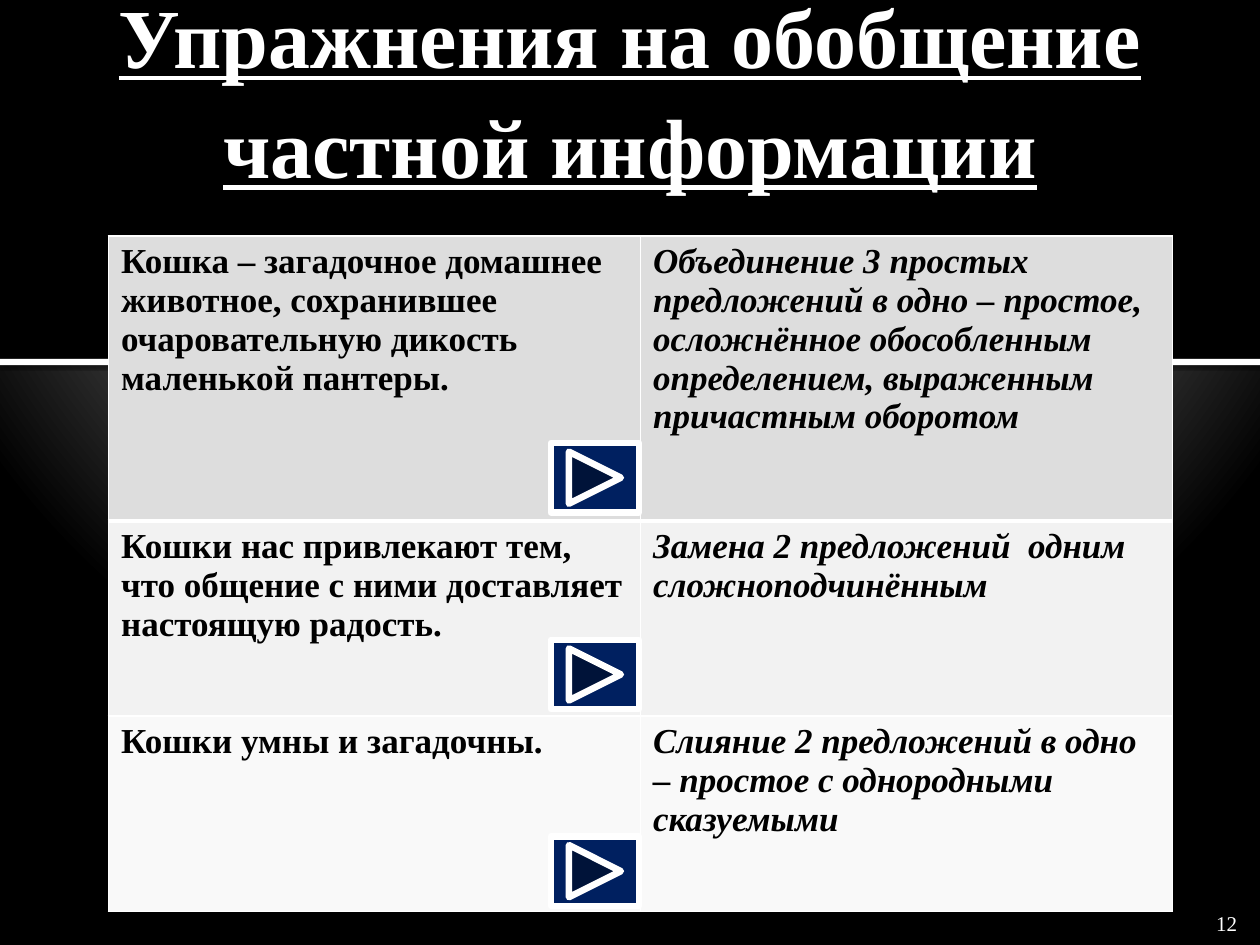
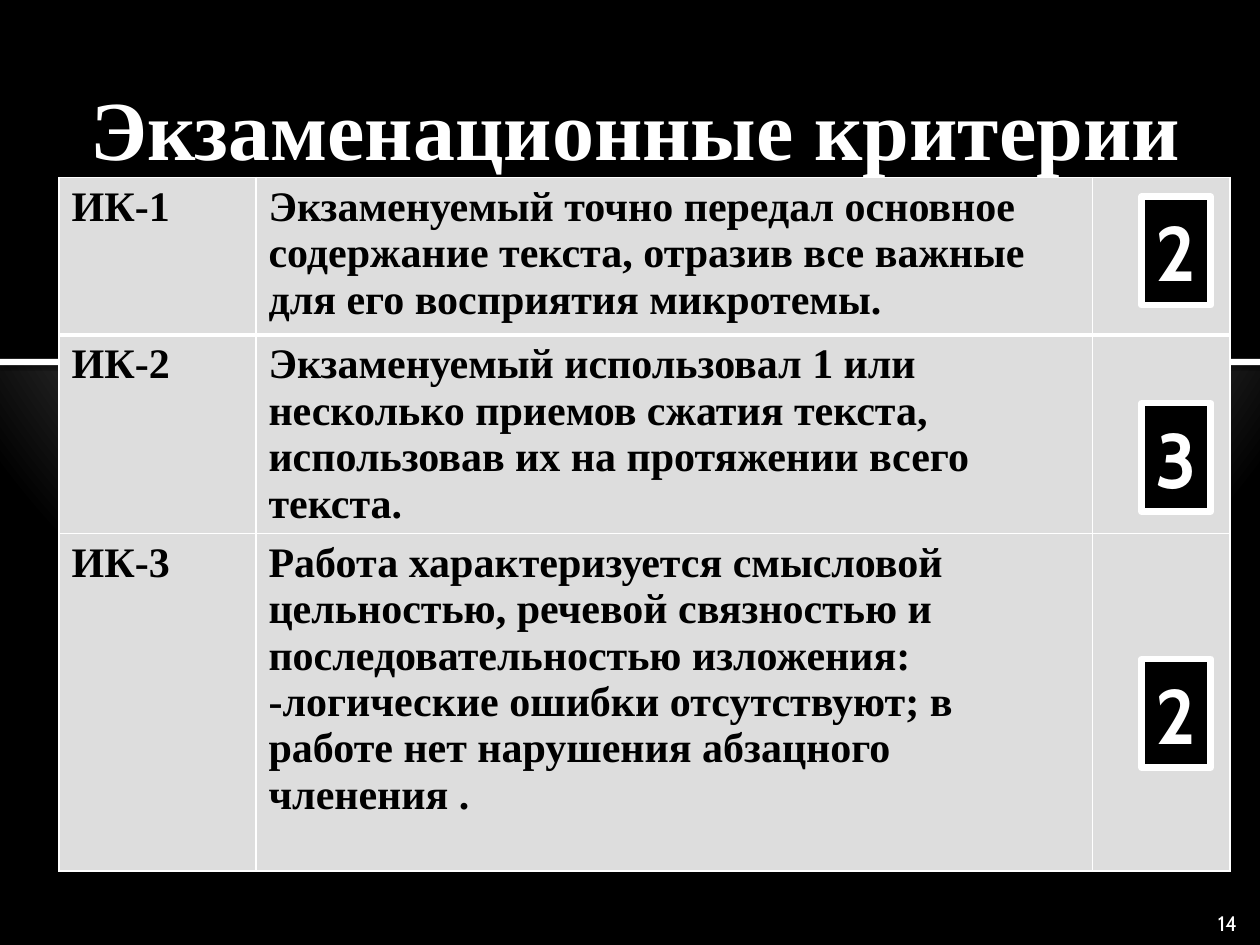
from dataclasses import dataclass

from pptx import Presentation
from pptx.dml.color import RGBColor
from pptx.enum.shapes import MSO_SHAPE
from pptx.enum.text import MSO_ANCHOR, MSO_AUTO_SIZE, PP_ALIGN
from pptx.oxml import parse_xml
from pptx.oxml.ns import nsdecls, qn
from pptx.util import Pt

RECTANGLE = MSO_SHAPE.RECTANGLE
NEXT_BUTTON = MSO_SHAPE.ACTION_BUTTON_FORWARD_OR_NEXT
LEFT, CENTER, RIGHT = PP_ALIGN.LEFT, PP_ALIGN.CENTER, PP_ALIGN.RIGHT
MIDDLE, BOTTOM = MSO_ANCHOR.MIDDLE, MSO_ANCHOR.BOTTOM
NO_AUTOFIT = MSO_AUTO_SIZE.NONE
TITLE_ONLY = 5
SLIDE_WIDTH, SLIDE_HEIGHT = 720, 540


@dataclass(frozen=True)
class Theme:
    black: str = "000000"
    white: str = "FFFFFF"
    navy: str = "002060"
    row_dark: str = "DDDDDD"
    row_light: str = "F2F2F2"
    row_pale: str = "F9F9F9"
    glow: tuple = ((0, "C0C0C0"), (12, "C0C0C0"), (20, "BEBEBE"), (100, "000000"))
    serif: str = "Times New Roman"
    sans: str = "Cabin"
    title_size: int = 48
    score_size: int = 44
    criteria_size: int = 24
    exercise_size: int = 20
    number_size: int = 12
    frame: float = 3.78
    border: int = 1
    header_border: int = 3


class Deck:
    def __init__(self, theme):
        self.theme = theme
        self.prs = Presentation()
        self.prs.slide_width = Pt(SLIDE_WIDTH)
        self.prs.slide_height = Pt(SLIDE_HEIGHT)
        self.slide = None

    def new_slide(self):
        self.slide = self.prs.slides.add_slide(self.prs.slide_layouts[TITLE_ONLY])

    def background(self):
        """Give the master a radial glow."""
        master = self.prs.slide_master
        master.background.fill.gradient()
        plain = master.element.find(".//" + qn("a:gradFill"))
        stops = "".join(
            f'<a:gs pos="{pos * 1000}"><a:srgbClr val="{color}"/></a:gs>'
            for pos, color in self.theme.glow)
        plain.getparent().replace(plain, parse_xml(
            f'<a:gradFill {nsdecls("a")} rotWithShape="1"><a:gsLst>{stops}</a:gsLst>'
            '<a:path path="circle"><a:fillToRect l="10000" t="-25000" r="10000" '
            'b="125000"/></a:path></a:gradFill>'))

    def master_bands(self):
        """Put the black upper half and its white edge on the master."""
        upper_half = self.shape(RECTANGLE, (0, 0, SLIDE_WIDTH, 205), self.theme.black)
        edge = self.shape(RECTANGLE, (0, 205, SLIDE_WIDTH, 3.6), self.theme.white)
        effects = edge.element.spPr.find(qn("a:effectLst"))
        effects.append(parse_xml(
            f'<a:outerShdw {nsdecls("a")} blurRad="{Pt(2.5)}" dist="{Pt(0.8)}" '
            f'dir="5400000"><a:srgbClr val="{self.theme.black}">'
            '<a:alpha val="60000"/></a:srgbClr></a:outerShdw>'))
        for position, band in enumerate((upper_half, edge), start=2):
            self.prs.slide_master.shapes.element.insert(position, band.element)

    def style(self, frame, size, color, font, bold=False, italic=False,
              underline=False, align=LEFT):
        for paragraph in frame.paragraphs:
            paragraph.alignment = align
            for run in paragraph.runs:
                run.font.size = Pt(size)
                run.font.name = font
                run.font.color.rgb = RGBColor.from_string(color)
                run.font.bold = bold
                run.font.italic = italic
                run.font.underline = underline

    def title(self, text, box, align=LEFT, underline=False):
        heading = self.slide.shapes.title
        heading.left, heading.top, heading.width, heading.height = map(Pt, box)
        frame = heading.text_frame
        frame.text = text
        frame.word_wrap = True
        frame.auto_size = NO_AUTOFIT
        frame.vertical_anchor = BOTTOM
        frame.margin_top = frame.margin_bottom = 0
        self.style(frame, self.theme.title_size, self.theme.white, self.theme.serif,
                   bold=True, underline=underline, align=align)
        frame.paragraphs[0].line_spacing = 1.09

    def page_number(self, number, font):
        box = self.slide.shapes.add_textbox(Pt(678), Pt(497), Pt(36), Pt(37.5))
        frame = box.text_frame
        frame.text = str(number)
        frame.word_wrap = True
        frame.vertical_anchor = BOTTOM
        frame.margin_bottom = 0
        self.style(frame, self.theme.number_size, self.theme.white, font, align=RIGHT)

    def shape(self, kind, box, fill, framed=False):
        item = self.slide.shapes.add_shape(kind, *map(Pt, box))
        item.shadow.inherit = False
        item.fill.solid()
        item.fill.fore_color.rgb = RGBColor.from_string(fill)
        if framed:
            item.line.color.rgb = RGBColor.from_string(self.theme.white)
            item.line.width = Pt(self.theme.frame)
        else:
            item.line.fill.background()
        return item

    def score(self, value, top):
        badge = self.shape(RECTANGLE, (652.3, top, 39.6, 62), self.theme.black, True)
        badge.text_frame.text = value
        badge.text_frame.vertical_anchor = MIDDLE
        self.style(badge.text_frame, self.theme.score_size, self.theme.white,
                   self.theme.sans, bold=True, align=CENTER)

    def borders(self, cell, row):
        top, bottom = (self.theme.header_border if row == edge else self.theme.border
                       for edge in (1, 0))
        sides = {"L": self.theme.border, "R": self.theme.border, "T": top, "B": bottom}
        properties = cell._tc.get_or_add_tcPr()
        for position, (side, width) in enumerate(sides.items()):
            properties.insert(position, parse_xml(
                f'<a:ln{side} {nsdecls("a")} w="{Pt(width)}"><a:solidFill>'
                f'<a:srgbClr val="{self.theme.white}"/></a:solidFill></a:ln{side}>'))

    def table(self, rows, left, top, widths, heights, fills, size, italic_column=None):
        grid = self.slide.shapes.add_table(
            len(rows), len(widths), Pt(left), Pt(top),
            Pt(sum(widths)), Pt(sum(heights))).table
        grid.first_row = grid.horz_banding = False
        for column, width in zip(grid.columns, widths):
            column.width = Pt(width)
        for r, (texts, height, fill) in enumerate(zip(rows, heights, fills)):
            grid.rows[r].height = Pt(height)
            for c, text in enumerate(texts):
                cell = grid.cell(r, c)
                cell.text_frame.text = text
                cell.fill.solid()
                cell.fill.fore_color.rgb = RGBColor.from_string(fill)
                self.borders(cell, r)
                self.style(cell.text_frame, size, self.theme.black, self.theme.serif,
                           bold=True, italic=c == italic_column)


def exercises_slide(deck):
    theme = deck.theme
    deck.title("Упражнения на обобщение частной информации",
               (16.5, 21.6, 687, 90), CENTER, underline=True)
    deck.page_number(12, theme.serif)
    exercises = [
        ("Кошка – загадочное домашнее животное, сохранившее очаровательную "
         "дикость маленькой пантеры.",
         "Объединение 3 простых предложений в одно – простое, осложнённое "
         "обособленным определением, выраженным причастным оборотом"),
        ("Кошки нас привлекают тем, что общение с ними доставляет настоящую радость.",
         "Замена 2 предложений  одним сложноподчинённым"),
        ("Кошки умны и загадочны.",
         "Слияние 2 предложений в одно – простое с однородными сказуемыми"),
    ]
    deck.table(exercises, 62, 134.8, (304, 304), (163, 111.5, 111.5),
               (theme.row_dark, theme.row_light, theme.row_pale),
               theme.exercise_size, italic_column=1)
    # One button at the foot of each exercise
    for row in range(len(exercises)):
        deck.shape(NEXT_BUTTON, (314.8, 253.2 + 112.4 * row, 50.4, 39.6),
                   theme.navy, framed=True)


def criteria_slide(deck):
    theme = deck.theme
    deck.title("Экзаменационные критерии", (44.6, 11.5, 641, 90))
    criteria = [
        ("ИК-1", "Экзаменуемый точно передал основное содержание текста, "
                 "отразив все важные для его восприятия микротемы.", ""),
        ("ИК-2", "Экзаменуемый использовал 1 или несколько приемов сжатия текста, "
                 "использовав их на протяжении всего текста.", ""),
        ("ИК-3", "Работа характеризуется смысловой цельностью, речевой связностью "
                 "и последовательностью изложения:\n"
                 "-логические ошибки отсутствуют; в работе нет нарушения "
                 "абзацного членения .", ""),
    ]
    deck.table(criteria, 33.8, 101.5, (112.5, 478, 78.5), (90, 113, 193),
               [theme.row_dark] * len(criteria), theme.criteria_size)
    deck.page_number(14, theme.sans)
    # Highest score for each criterion
    for value, top in (("2", 112.4), ("3", 230.4), ("2", 376.6)):
        deck.score(value, top)


def main():
    deck = Deck(Theme())
    deck.background()
    deck.new_slide()
    deck.master_bands()
    exercises_slide(deck)
    deck.new_slide()
    criteria_slide(deck)
    deck.prs.save("out.pptx")


if __name__ == "__main__":
    main()
